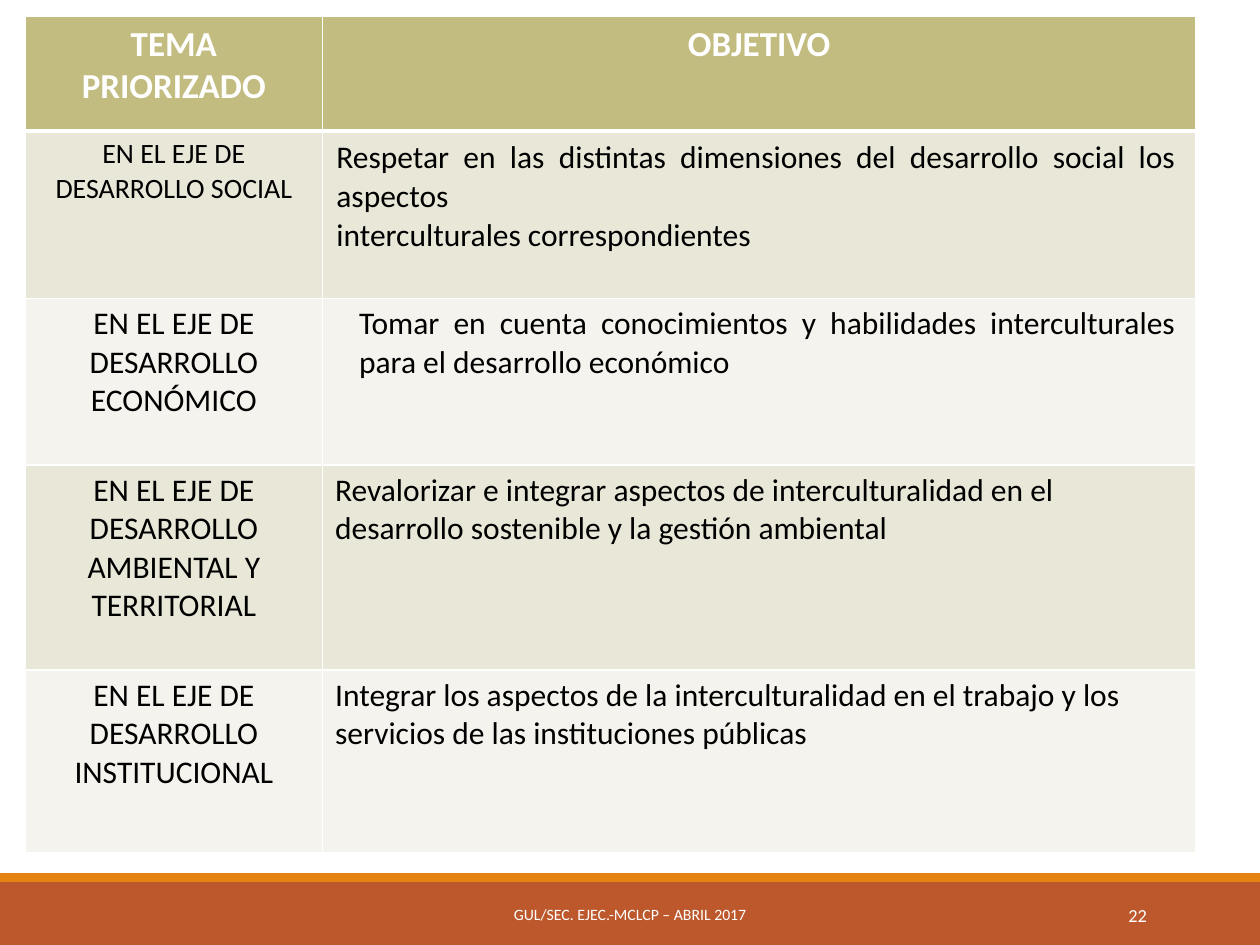
from dataclasses import dataclass

from lxml import etree
from pptx import Presentation
from pptx.dml.color import RGBColor
from pptx.enum import shapes, text
from pptx.oxml import ns
from pptx.util import Inches, Pt


@dataclass(frozen=True)
class Theme:
    font: str = "Calibri"
    white: str = "FFFFFF"
    black: str = "000000"
    header: str = "C2BC80"
    bands: tuple = ("E9E7D8", "F4F3ED")
    footer: str = "BD582C"
    stripe: str = "E48312"
    header_size: float = 20
    body_size: float = 18
    small_size: float = 16
    number_size: float = 10.5
    footer_size: float = 9


THEME = Theme()
ALIGN = text.PP_ALIGN
COLUMNS = (2.36, 6.93)
HEIGHTS = (0.91, 1.33, 1.32, 1.63, 1.45)
HEADINGS = ("TEMA PRIORIZADO", "OBJETIVO")


@dataclass(frozen=True)
class Objective:
    topic: str
    goals: tuple
    topic_size: float = THEME.body_size
    align: ALIGN = ALIGN.LEFT
    indent: float = 0
    margin_right: float = 0.1
    spacing: float = 1


OBJECTIVES = (
    Objective(
        "EN EL EJE DE DESARROLLO SOCIAL",
        ("Respetar en las distintas dimensiones del desarrollo social los aspectos",
         "interculturales correspondientes"),
        THEME.small_size, ALIGN.JUSTIFY, 0.01, 0.16, 1.02),
    Objective(
        "EN EL EJE DE DESARROLLO ECONÓMICO",
        ("Tomar en cuenta conocimientos y habilidades interculturales "
         "para el desarrollo económico",),
        align=ALIGN.JUSTIFY, indent=0.19, margin_right=0.16),
    Objective(
        "EN EL EJE DE DESARROLLO AMBIENTAL Y TERRITORIAL",
        ("Revalorizar e integrar aspectos de interculturalidad en el "
         "desarrollo sostenible y la gestión ambiental",)),
    Objective(
        "EN EL EJE DE DESARROLLO INSTITUCIONAL",
        ("Integrar los aspectos de la interculturalidad en el trabajo y los "
         "servicios de las instituciones públicas",)),
)


def write(frame, lines, size, color, align, bold=False, indent=0, spacing=1):
    for index, line in enumerate(lines):
        para = frame.paragraphs[0] if index == 0 else frame.add_paragraph()
        para.alignment = align
        para.line_spacing = spacing
        if indent:
            para._p.get_or_add_pPr().set("marL", str(Inches(indent)))
        span = para.add_run()
        span.text = line
        span.font.name = THEME.font
        span.font.size = Pt(size)
        span.font.bold = bold
        span.font.color.rgb = RGBColor.from_string(color)


def style_cell(cell, fill, top=1, bottom=1):
    properties = cell._tc.get_or_add_tcPr()
    for side, width in (("L", 1), ("R", 1), ("T", top), ("B", bottom)):
        line = etree.SubElement(properties, ns.qn(f"a:ln{side}"), w=str(Pt(width)))
        solid = etree.SubElement(line, ns.qn("a:solidFill"))
        etree.SubElement(solid, ns.qn("a:srgbClr"), val=THEME.white)
    cell.fill.solid()
    cell.fill.fore_color.rgb = RGBColor.from_string(fill)


def add_objectives(page, left, top, width, height):
    frame = page.shapes.add_table(
        len(HEIGHTS), len(COLUMNS),
        Inches(left), Inches(top), Inches(width), Inches(height))
    table = frame.table
    for column, size in zip(table.columns, COLUMNS):
        column.width = Inches(size)
    for row, size in zip(table.rows, HEIGHTS):
        row.height = Inches(size)

    for column, heading in enumerate(HEADINGS):
        cell = table.cell(0, column)
        style_cell(cell, THEME.header, bottom=3)
        write(cell.text_frame, [heading], THEME.header_size, THEME.white,
              ALIGN.CENTER, bold=True)

    for row, item in enumerate(OBJECTIVES, start=1):
        topic, goal = table.cell(row, 0), table.cell(row, 1)
        for cell in (topic, goal):
            style_cell(cell, THEME.bands[(row - 1) % 2], top=3 if row == 1 else 1)
        goal.margin_right = Inches(item.margin_right)
        write(topic.text_frame, [item.topic], item.topic_size, THEME.black, ALIGN.CENTER)
        write(goal.text_frame, item.goals, THEME.body_size, THEME.black, item.align,
              indent=item.indent, spacing=item.spacing)


def add_band(page, left, top, width, height, color):
    band = page.shapes.add_shape(
        shapes.MSO_SHAPE.RECTANGLE,
        Inches(left), Inches(top), Inches(width), Inches(height))
    band.shadow.inherit = False
    band.fill.solid()
    band.fill.fore_color.rgb = RGBColor.from_string(color)
    band.line.fill.background()


def add_label(page, left, top, width, height, label, size, align):
    box = page.shapes.add_textbox(
        Inches(left), Inches(top), Inches(width), Inches(height))
    box.text_frame.word_wrap = True
    box.text_frame.vertical_anchor = text.MSO_ANCHOR.MIDDLE
    write(box.text_frame, [label], size, THEME.white, align)


def add_footer(page, left, top, width, height):
    stripe = 0.07
    add_band(page, left, top + stripe, width, height - stripe, THEME.footer)
    add_band(page, left, top, width, stripe, THEME.stripe)
    label_top = top + 0.13
    add_label(page, left + 8.12, label_top, 1.08, 0.4, "22",
              THEME.number_size, ALIGN.RIGHT)
    add_label(page, left + 3.02, label_top, 3.96, 0.4,
              "GUL/SEC. EJEC.-MCLCP – ABRIL 2017", THEME.footer_size, ALIGN.CENTER)


def main():
    deck = Presentation()
    deck.slide_width, deck.slide_height = Inches(10), Inches(7.5)
    page = deck.slides.add_slide(deck.slide_layouts[6])
    add_footer(page, 0, 6.93, 10, 0.57)
    add_objectives(page, 0.2, 0.13, sum(COLUMNS), sum(HEIGHTS))
    deck.save("out.pptx")


if __name__ == "__main__":
    main()
